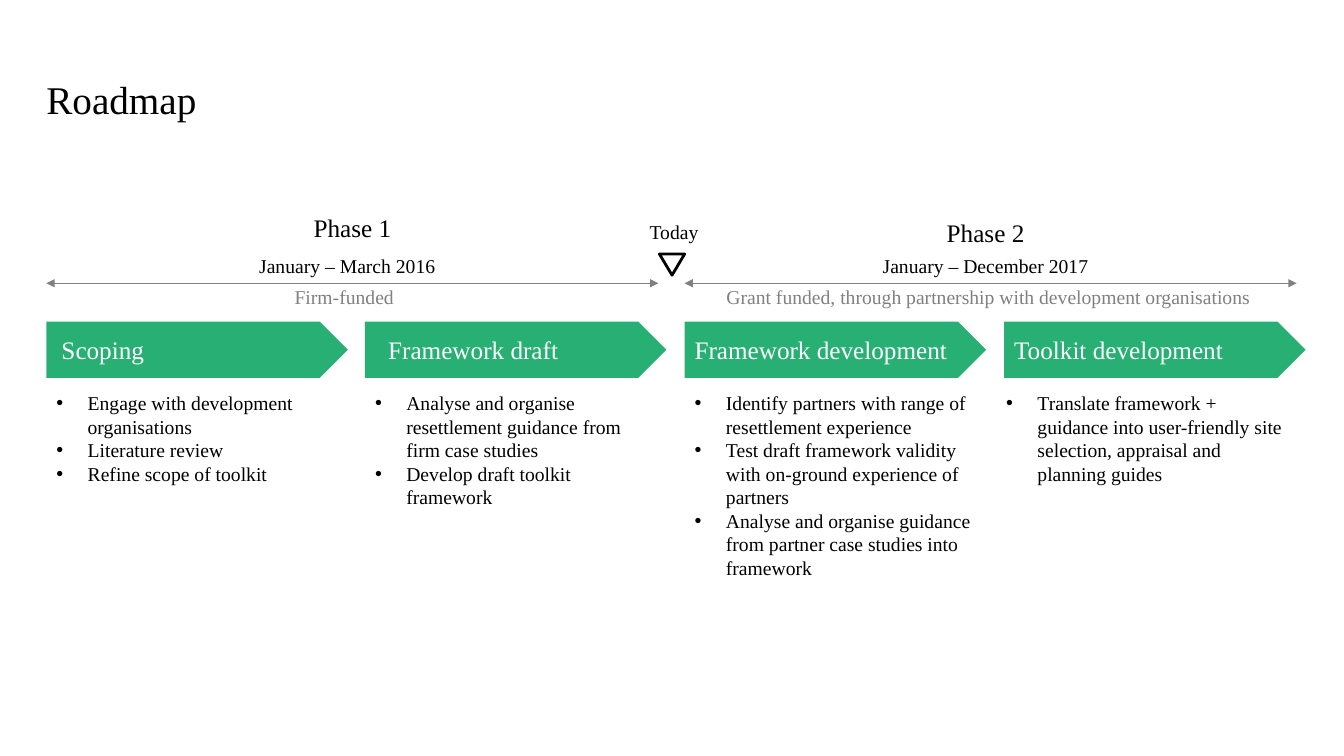
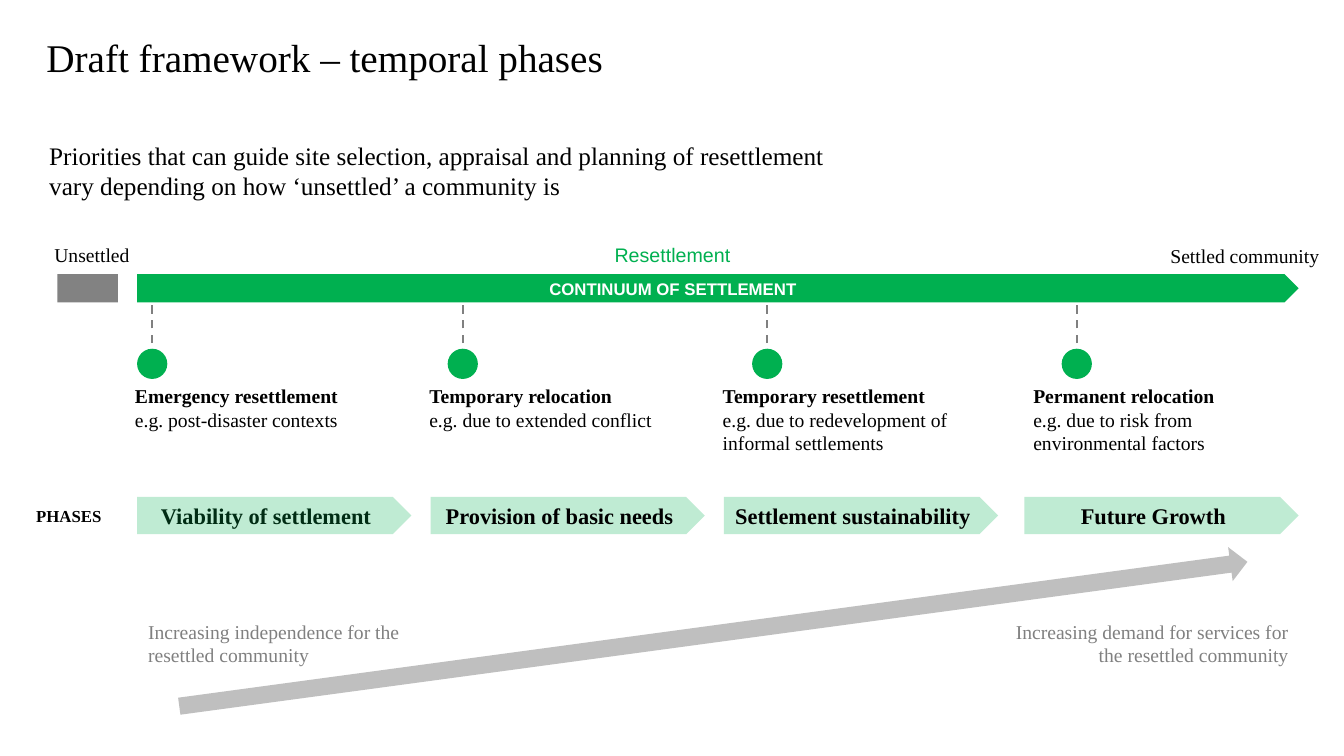
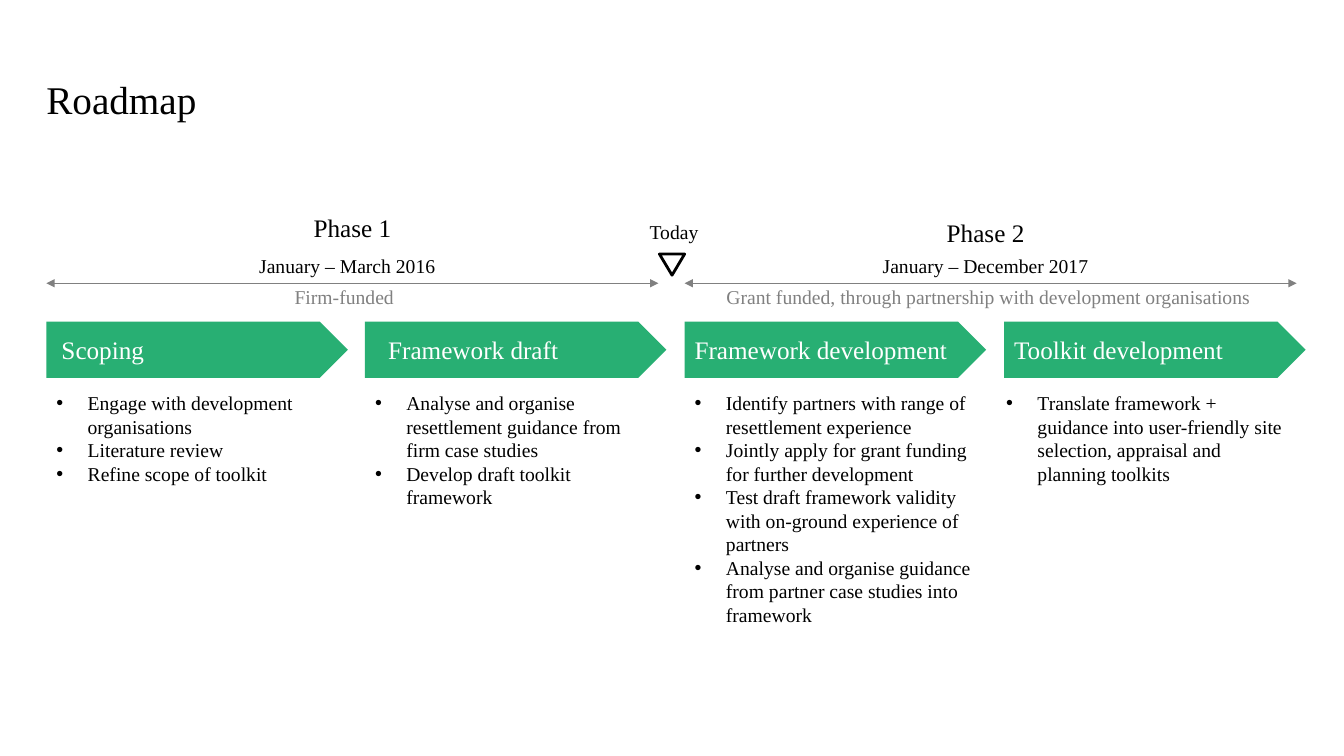
from lxml.etree import SubElement
from pptx import Presentation
from pptx.dml.color import RGBColor
from pptx.enum.dml import MSO_LINE
from pptx.enum.shapes import MSO_CONNECTOR, MSO_SHAPE
from pptx.enum.text import MSO_ANCHOR, MSO_AUTO_SIZE, PP_ALIGN
from pptx.oxml.ns import qn
from pptx.util import Emu, Pt

PX = 9144  # 100 px to the inch
SERIF, SANS = "Times New Roman", "Arial"
BLACK, WHITE, GREY = "000000", "FFFFFF", "808080"
TEAL, GREEN, DARK_GREEN = "28AF73", "00B050", "002C14"
LEFT, CENTER, RIGHT = PP_ALIGN.LEFT, PP_ALIGN.CENTER, PP_ALIGN.RIGHT
TITLE_ONLY, FOUR_LISTS = 5, 4


def px(*lengths):
    return [Emu(length * PX) for length in lengths]


def color(hex_code):
    return RGBColor.from_string(hex_code)


def write(frame, text, size=14, ink=BLACK, font=SERIF, align=LEFT, bold_lines=0,
          anchor=MSO_ANCHOR.TOP, insets=(10, 10), bullet=None):
    """Fill a text frame; text is one string or a list of paragraphs."""
    frame.word_wrap = True
    frame.auto_size = MSO_AUTO_SIZE.NONE
    frame.vertical_anchor = anchor
    frame.margin_left, frame.margin_right = px(*insets)
    frame.margin_top, frame.margin_bottom = px(5, 5)
    lines = [text] if isinstance(text, str) else text
    for index, line in enumerate(lines):
        paragraph = frame.paragraphs[0] if index == 0 else frame.add_paragraph()
        if bullet:
            properties = paragraph._p.get_or_add_pPr()
            properties.set("marL", str(31 * PX))
            properties.set("indent", str(-31 * PX))
            SubElement(properties, qn("a:buFont"), typeface=SANS)
            SubElement(properties, qn("a:buChar"), char=bullet)
        paragraph.alignment = align
        paragraph.space_before = Pt(0)
        run = paragraph.add_run()
        run.text = line
        run.font.size = Pt(size)
        run.font.name = font
        run.font.bold = index < bold_lines
        run.font.color.rgb = color(ink)


class Deck:
    def __init__(self):
        self.show = Presentation()
        self.show.slide_width, self.show.slide_height = px(1333, 750)
        self.slide = None

    def new_slide(self, layout, title, at):
        self.slide = self.show.slides.add_slide(self.show.slide_layouts[layout])
        self.fill_placeholder(self.slide.shapes.title, title, at, size=28)

    def fill_placeholder(self, holder, text, at, **style):
        holder.left, holder.top, holder.width, holder.height = px(*at)
        write(holder.text_frame, text, **style)

    def lists(self, items_and_places):
        bodies = list(self.slide.placeholders)[1:]
        for body, (items, at) in zip(bodies, items_and_places):
            self.fill_placeholder(body, items, at, bullet="•")

    def text(self, text, at, **style):
        write(self.slide.shapes.add_textbox(*px(*at)).text_frame, text, **style)

    def shape(self, kind, at, fill=None, opacity=100, outline=None, rotation=0,
              text=None, **style):
        shape = self.slide.shapes.add_shape(kind, *px(*at))
        shape.shadow.inherit = False
        shape.rotation = rotation
        if fill:
            shape.fill.solid()
            shape.fill.fore_color.rgb = color(fill)
            if opacity < 100:
                tint = shape._element.spPr.find(".//" + qn("a:srgbClr"))
                SubElement(tint, qn("a:alpha"), val=str(opacity * 1000))
        else:
            shape.fill.background()
        if outline:
            shape.line.color.rgb = color(outline)
            shape.line.width = Pt(2)
        else:
            shape.line.fill.background()
        if text:
            write(shape.text_frame, text, anchor=MSO_ANCHOR.MIDDLE, **style)

    def line(self, start, end, width=1, dashed=False, arrows=False):
        line = self.slide.shapes.add_connector(
            MSO_CONNECTOR.STRAIGHT, *px(*start, *end))
        line.line.color.rgb = color(GREY)
        line.line.width = Pt(width)
        if dashed:
            line.line.dash_style = MSO_LINE.DASH
        properties = line._element.spPr
        if arrows:
            for tip in ("a:headEnd", "a:tailEnd"):
                SubElement(properties.find(qn("a:ln")), qn(tip), type="triangle")
        SubElement(properties, qn("a:effectLst"))


def roadmap(deck, development_tasks, deliverable):
    deck.new_slide(FOUR_LISTS, "Roadmap", (36, 70, 202, 57))
    columns = [46 + 950 * index // 3 for index in range(4)]
    steps = [("Scoping", 15), ("Framework draft", 23),
             ("Framework development", 10), ("Toolkit development", 10)]
    for left, (step, inset) in zip(columns, steps):
        deck.shape(MSO_SHAPE.PENTAGON, (left, 319, 299, 56), TEAL, text=step,
                   size=18, ink=WHITE, insets=(inset, 0))

    phases = [
        ("Phase 1", (244, 206, 211, 40), "January – March 2016", 196,
         "Firm-funded", (238, 278, 207, 34), 46),
        ("Phase 2", (872, 211, 211, 40), "January – December 2017", 829,
         "Grant funded, through partnership with development organisations",
         (695, 278, 571, 34), 679),
    ]
    for phase, phase_at, dates, dates_left, funding, funding_at, left in phases:
        deck.text(phase, phase_at, size=18, align=CENTER)
        deck.text(dates, (dates_left, 247, 297, 34), align=CENTER)
        deck.line((left, 281), (left + 607, 281), arrows=True)
        deck.text(funding, funding_at, ink=GREY, align=CENTER)

    deck.text("Today", (577, 213, 183, 34), align=CENTER)
    deck.shape(MSO_SHAPE.ISOSCELES_TRIANGLE, (654, 252, 25, 21),
               outline=BLACK, rotation=180)

    deck.lists([
        (["Engage with development organisations", "Literature review",
          "Refine scope of toolkit"], (46, 383, 299, 104)),
        (["Analyse and organise resettlement guidance from firm case studies",
          "Develop draft toolkit framework"], (362, 383, 293, 128)),
        (development_tasks, (679, 383, 299, 57 + 47 * len(development_tasks))),
        (["Translate framework + guidance into user-friendly site selection, "
          "appraisal and planning " + deliverable], (988, 383, 299, 104)),
    ])


def temporal_phases(deck):
    deck.new_slide(TITLE_ONLY, "Draft framework – temporal phases",
                   (36, 28, 801, 57))
    deck.text("Priorities that can guide site selection, appraisal and planning of "
              "resettlement vary depending on how ‘unsettled’ a community is",
              (39, 134, 807, 71), size=18)

    situations = [
        (136, 124, 57, "Emergency resettlement", "e.g. post-disaster contexts"),
        (444, 416, 57, "Temporary relocation", "e.g. due to extended conflict"),
        (746, 707, 81, "Temporary resettlement",
         "e.g. due to redevelopment of informal settlements"),
        (1053, 1015, 81, "Permanent relocation",
         "e.g. due to risk from environmental factors"),
    ]
    for dot_left, text_left, height, situation, example in situations:
        middle = dot_left + 15
        deck.line((middle, 355), (middle, 292), width=1.5, dashed=True)
        deck.shape(MSO_SHAPE.OVAL, (dot_left, 346, 30, 30), GREEN)
        deck.text([situation, example], (text_left, 376, 250, height), bold_lines=1)

    deck.shape(MSO_SHAPE.RECTANGLE, (57, 272, 60, 28), "828282")
    deck.shape(MSO_SHAPE.PENTAGON, (136, 272, 1152, 28), GREEN,
               text="CONTINUUM OF SETTLEMENT", size=12, ink=WHITE, font=SANS,
               align=CENTER, bold_lines=1, insets=(0, 82))
    deck.text("Unsettled", (44, 236, 105, 34))
    deck.text("Resettlement", (590, 236, 154, 34), ink=GREEN, font=SANS,
              align=CENTER)
    deck.text("Settled community", (1151, 237, 170, 34))

    deck.text("PHASES", (26, 497, 168, 30), size=12, bold_lines=1)
    phases = [(136, "Viability of settlement", DARK_GREEN),
              (427, "Provision of basic needs", BLACK),
              (718, "Settlement sustainability", BLACK),
              (1016, "Future Growth", BLACK)]
    for left, phase, ink in phases:
        deck.shape(MSO_SHAPE.PENTAGON, (left, 493, 272, 37), GREEN, opacity=25,
                   text=phase, size=16, ink=ink, align=CENTER, bold_lines=1,
                   insets=(8, 15))

    deck.shape(MSO_SHAPE.RIGHT_ARROW, (173, 612, 1069, 34), "BFBFBF",
               rotation=352.3)
    deck.text("Increasing independence for the resettled community",
              (137, 610, 302, 57), ink=GREY)
    deck.text("Increasing demand for services for the resettled community",
              (986, 610, 302, 57), ink=GREY, align=RIGHT)


def main():
    deck = Deck()
    partners = "Identify partners with range of resettlement experience"
    grant = "Jointly apply for grant funding for further development"
    testing = "Test draft framework validity with on-ground experience of partners"
    guidance = ("Analyse and organise guidance from partner case studies "
                "into framework")
    roadmap(deck, [partners, testing, guidance], "guides")
    temporal_phases(deck)
    roadmap(deck, [partners, grant, testing, guidance], "toolkits")
    deck.show.save("out.pptx")


if __name__ == "__main__":
    main()
